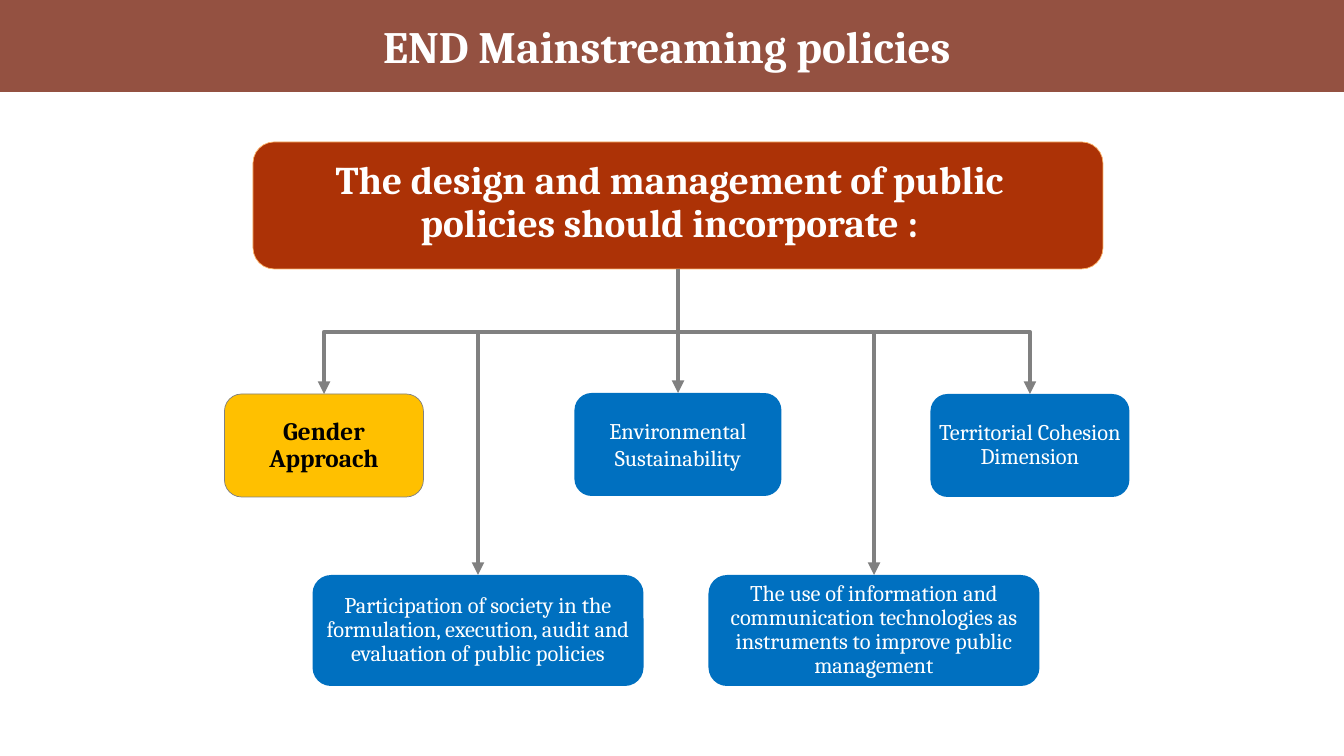
import pptx
import pptx.util
import pptx.dml.color
import pptx.enum.shapes
import pptx.enum.text
from lxml import etree

SLIDE_WIDTH, SLIDE_HEIGHT = 1344, 756
PX = 914400 / 100.8
FONT = "Cambria"
COLORS = {
    "header": "945141", "main": "AC3206", "main_edge": "FCB268",
    "blue": "0070C0", "yellow": "FFC000", "gray": "808080",
    "white": "FFFFFF", "black": "000000",
}

TITLE = "END Mainstreaming policies "
PREMISE = "The design and management of public policies should incorporate :"
PREMISE_BOX = (253, 142, 850, 127)
PREMISE_TEXT_BOX = (312, 156, 715, 96)
BRANCH_Y = 332

# text, centre x, top, width, height, line spacing, highlighted
POLICIES = [
    ("Gender Approach", 324, 394, 199, 103, 0.9, True),
    ("Environmental Sustainability", 678, 393, 207, 103, 1.0, False),
    ("Territorial Cohesion Dimension", 1030, 394, 199, 103, 0.9, False),
    ("Participation of society in the formulation, execution, audit and "
     "evaluation of public policies", 478, 575, 331, 111, 0.9, False),
    ("The use of information and communication technologies as instruments "
     "to improve public management", 874, 575, 331, 111, 0.9, False),
]


def px(*lengths):
    return [pptx.util.Emu(round(length * PX)) for length in lengths]


def rgb(name):
    return pptx.dml.color.RGBColor.from_string(COLORS[name])


def add_box(slide, kind, bounds, fill, edge=None):
    box = slide.shapes.add_shape(kind, *px(*bounds))
    box.shadow.inherit = False
    box.fill.solid()
    box.fill.fore_color.rgb = rgb(fill)
    if edge:
        box.line.color.rgb = rgb(edge)
        box.line.width = pptx.util.Pt(0.5)
    else:
        box.line.fill.background()
    return box


def write(shape, text, size, color="white", bold=False, spacing=1.0, inset=None):
    frame = shape.text_frame
    frame.word_wrap = True
    if inset is not None:
        frame.margin_left = frame.margin_right = inset
        frame.margin_top = frame.margin_bottom = inset
    paragraph = frame.paragraphs[0]
    paragraph.text = text
    paragraph.alignment = pptx.enum.text.PP_ALIGN.CENTER
    paragraph.line_spacing = spacing
    paragraph.font.name = FONT
    paragraph.font.size = pptx.util.Pt(size)
    paragraph.font.bold = bold
    paragraph.font.color.rgb = rgb(color)
    return frame


def add_branch(slide, x1, y1, x2, y2):
    """Draw a down-across-down arrow: an elbow connector turned a quarter."""
    middle_x, middle_y = (x1 + x2) / 2, (y1 + y2) / 2
    rightward = x2 > x1
    half_length = (y2 - y1) / 2 * (-1 if rightward else 1)
    half_span = abs(x2 - x1) / 2
    branch = slide.shapes.add_connector(
        pptx.enum.shapes.MSO_CONNECTOR.ELBOW,
        *px(middle_x - half_length, middle_y - half_span,
            middle_x + half_length, middle_y + half_span))
    branch.line.color.rgb = rgb("gray")
    branch.line.width = pptx.util.Pt(3)

    properties = branch.element.spPr
    properties.xfrm.set("rot", str((270 if rightward else 90) * 60000))
    namespace = "{http://schemas.openxmlformats.org/drawingml/2006/main}"
    bend = round((BRANCH_Y - y1) / (y2 - y1) * 100000)
    etree.SubElement(properties.find(f".//{namespace}avLst"), namespace + "gd",
                     name="adj1", fmla=f"val {bend}")
    etree.SubElement(properties.find(namespace + "ln"), namespace + "tailEnd",
                     type="triangle")
    etree.SubElement(properties, namespace + "effectLst")


def main():
    deck = pptx.Presentation()
    deck.slide_width, deck.slide_height = px(SLIDE_WIDTH, SLIDE_HEIGHT)
    slide = deck.slides.add_slide(deck.slide_layouts[6])
    rectangle = pptx.enum.shapes.MSO_SHAPE.RECTANGLE
    rounded = pptx.enum.shapes.MSO_SHAPE.ROUNDED_RECTANGLE
    anchor_middle = pptx.enum.text.MSO_ANCHOR.MIDDLE

    header = add_box(slide, rectangle, (0, 0, SLIDE_WIDTH, 92), "header")
    write(header, TITLE, 32, bold=True).vertical_anchor = anchor_middle

    add_box(slide, rounded, PREMISE_BOX, "main", "main_edge")
    premise = slide.shapes.add_textbox(*px(*PREMISE_TEXT_BOX))
    write(premise, PREMISE, 28, bold=True, spacing=0.9)

    left, top, width, height = PREMISE_BOX
    trunk_x, trunk_y = left + width // 2, top + height
    for text, center, top, width, height, spacing, highlighted in POLICIES:
        bounds = (center - width / 2, top, width, height)
        if highlighted:
            policy = add_box(slide, rounded, bounds, "yellow", "gray")
            frame = write(policy, text, 18, "black", True, spacing, px(1)[0])
        else:
            policy = add_box(slide, rounded, bounds, "blue")
            frame = write(policy, text, 16, spacing=spacing, inset=px(1)[0])
        frame.vertical_anchor = anchor_middle
        add_branch(slide, trunk_x, trunk_y, center, top)

    deck.save("out.pptx")


if __name__ == "__main__":
    main()
